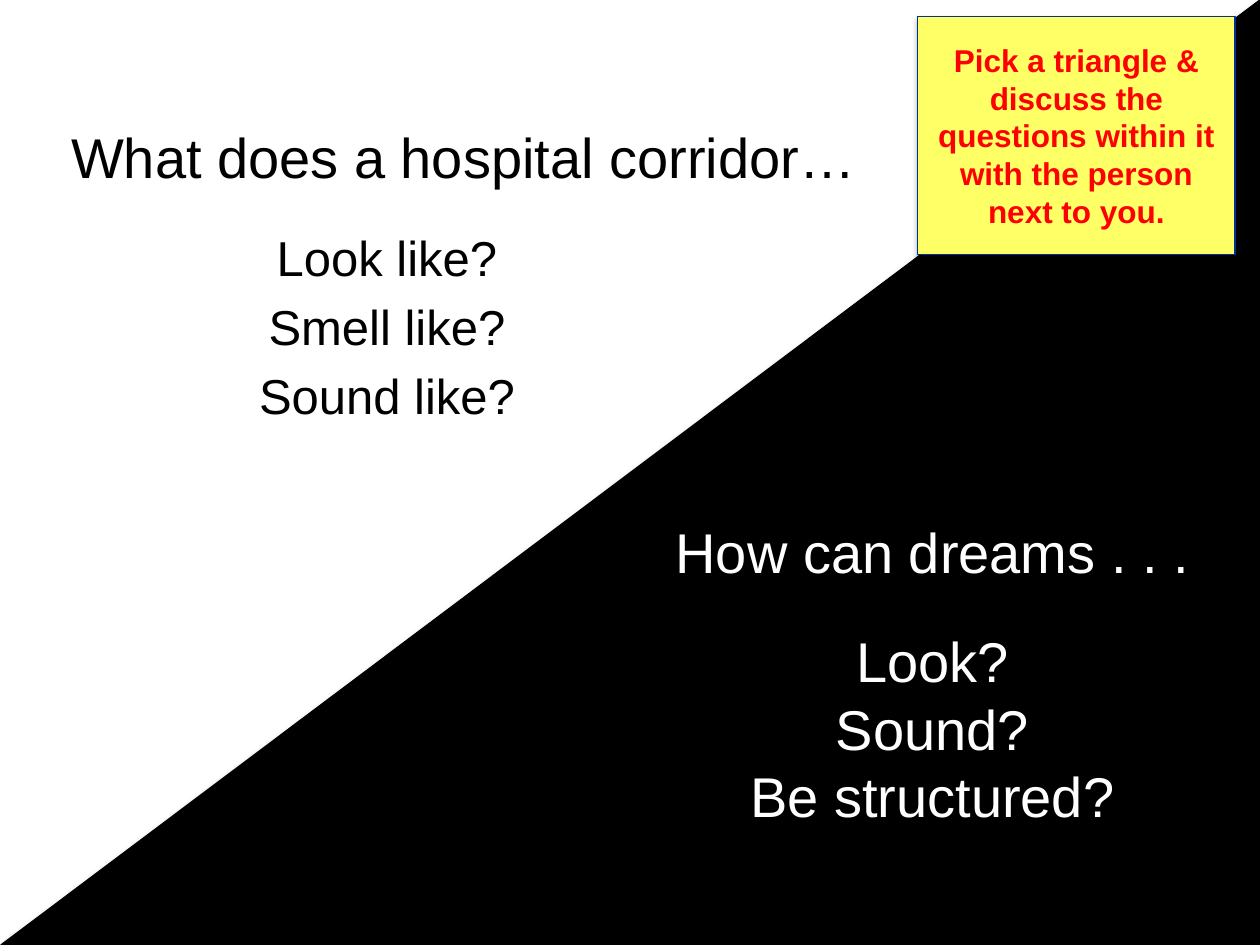
from lxml import etree
from pptx import Presentation
from pptx.dml.color import RGBColor
from pptx.enum.shapes import MSO_SHAPE
from pptx.enum.text import MSO_ANCHOR, MSO_AUTO_SIZE, PP_ALIGN
from pptx.oxml import parse_xml
from pptx.oxml.ns import qn
from pptx.util import Cm, Pt

TRIANGLE, RECTANGLE = MSO_SHAPE.ISOSCELES_TRIANGLE, MSO_SHAPE.RECTANGLE
TOP, MIDDLE = MSO_ANCHOR.TOP, MSO_ANCHOR.MIDDLE
CENTER = PP_ALIGN.CENTER
NO_AUTOFIT = MSO_AUTO_SIZE.NONE
TITLE_ONLY = 5
FONT = "Arial"
COLORS = {
    "black": "000000",
    "white": "FFFFFF",
    "yellow": "FFFF66",
    "navy": "003296",
    "red": "FF0000",
}


def rgb(name):
    return RGBColor.from_string(COLORS[name])


def write_text(shape, lines, size, color, anchor=TOP, bold=False, space_before=0):
    """Fill a shape with centred paragraphs in one style."""
    frame = shape.text_frame
    frame.text = "\n".join(lines)
    frame.word_wrap = True
    frame.auto_size = NO_AUTOFIT
    frame.vertical_anchor = anchor
    for paragraph in frame.paragraphs:
        paragraph.alignment = CENTER
        paragraph.space_before = Pt(space_before)
        for run in paragraph.runs:
            font = run.font
            font.name, font.size, font.bold = FONT, Pt(size), bold
            font.color.rgb = rgb(color)


def add_soft_shadow(shape):
    """Give a shape a faint shadow straight below it."""
    shape.shadow.inherit = False
    effects = shape._element.spPr.find(qn("a:effectLst"))
    shadow = etree.SubElement(
        effects, qn("a:outerShdw"), blurRad=str(Pt(3.1)), dist=str(Pt(1.8)),
        dir="5400000", rotWithShape="0")
    shade = etree.SubElement(shadow, qn("a:srgbClr"), val=COLORS["black"])
    etree.SubElement(shade, qn("a:alpha"), val="35000")


def add_panel(slide, preset, box, fill, line):
    panel = slide.shapes.add_shape(preset, *map(Cm, box))
    panel.fill.solid()
    panel.fill.fore_color.rgb = rgb(fill)
    panel.line.color.rgb = rgb(line)
    panel.line.width = Pt(0.75)
    add_soft_shadow(panel)
    return panel


def add_questions(slide, box, lines, size, color, space_before=0):
    questions = slide.shapes.add_textbox(*map(Cm, box))
    write_text(questions, lines, size, color, space_before=space_before)
    return questions


def place_title(slide, box, text):
    title = slide.shapes.title
    title.left, title.top, title.width, title.height = map(Cm, box)
    write_text(title, [text], 32, "black", MIDDLE)


def main():
    prs = Presentation()
    prs.slide_width, prs.slide_height = Cm(25.4), Cm(19.05)
    slide = prs.slides.add_slide(prs.slide_layouts[TITLE_ONLY])

    # Black lower half, with its apex in the top right corner
    lower_half = add_panel(slide, TRIANGLE, (0.02, 0, 25.38, 19.05), "black", "black")
    lower_half.adjustments[0] = 1

    # White half: the corridor
    place_title(slide, (0.1, 1.1, 18.5, 4.1), "What does a hospital corridor…")
    add_questions(slide, (3.2, 4.47, 9.2, 4.88),
                  ["Look like?", "Smell like?", "Sound like?"], 28, "black",
                  space_before=5.6)

    # Black half: dreams, with a gap below the opening line
    dreams = add_questions(slide, (13, 10.31, 11.6, 7.77),
                           ["How can dreams . . .", "Look?", "Sound?", "Be structured?"],
                           32, "white")
    dreams.text_frame.paragraphs[1].space_before = Pt(24)

    # Instruction note
    note = add_panel(slide, RECTANGLE, (18.5, 0.33, 6.4, 4.8), "yellow", "navy")
    write_text(note, ["Pick a triangle & discuss the questions within it "
                      "with the person next to you."], 18, "red", MIDDLE, bold=True)

    prs.save("out.pptx")


if __name__ == "__main__":
    main()
